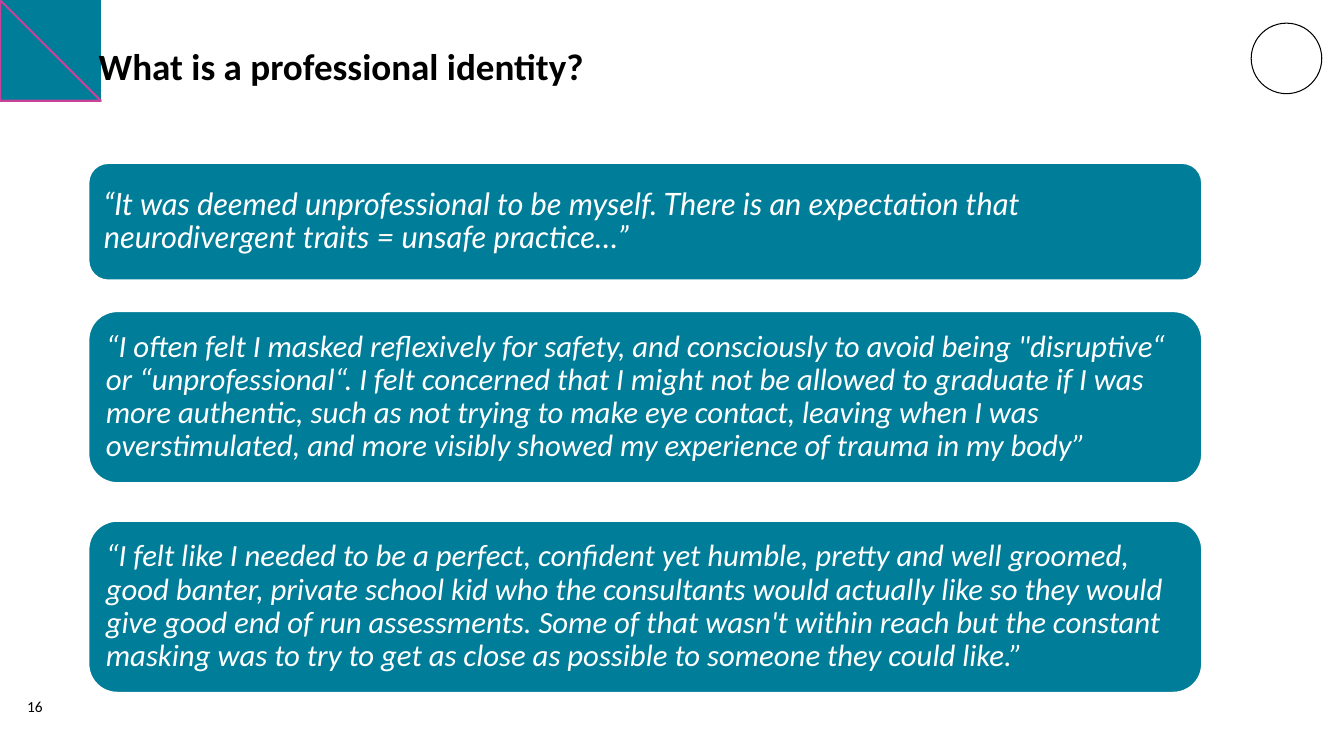
from math import cos, radians, sin

from pptx import Presentation
from pptx.dml.color import RGBColor
from pptx.enum.shapes import MSO_SHAPE
from pptx.enum.text import MSO_ANCHOR, PP_ALIGN
from pptx.util import Inches, Pt

ROUNDED, OVAL = MSO_SHAPE.ROUNDED_RECTANGLE, MSO_SHAPE.OVAL
TOP, MIDDLE, LEFT = MSO_ANCHOR.TOP, MSO_ANCHOR.MIDDLE, PP_ALIGN.LEFT

THEME = {
    "teal": RGBColor(0x00, 0x7D, 0x98),
    "pink": RGBColor(0xC7, 0x42, 0x98),
    "black": RGBColor(0, 0, 0),
    "white": RGBColor(255, 255, 255),
    "font": "Calibri",
    "quote_font": "Lato",
    "title_size": Pt(26.5),
    "quote_size": Pt(22),
    "number_size": Pt(11),
}

# Quote cards share one column: top, height, inset, font, text
CARD_LEFT, CARD_WIDTH = 0.88, 11.04
QUOTES = [
    (1.62, 1.16, 0.15, THEME["quote_font"],
     "“It was deemed unprofessional to be myself. There is an expectation that "
     "neurodivergent traits = unsafe practice…”"),
    (3.09, 1.7, 0.17, THEME["font"],
     "“I often felt I masked reflexively for safety, and consciously to avoid being "
     "\"disruptive“ or “unprofessional“. I felt concerned that I might not be allowed "
     "to graduate if I was more authentic, such as not trying to make eye contact, "
     "leaving when I was overstimulated, and more visibly showed my experience of "
     "trauma in my body”"),
    (5.17, 1.7, 0.17, THEME["font"],
     "“I felt like I needed to be a perfect, confident yet humble, pretty and well "
     "groomed, good banter, private school kid who the consultants would actually like "
     "so they would give good end of run assessments. Some of that wasn't within reach "
     "but the constant masking was to try to get as close as possible to someone they "
     "could like.”"),
]


def paint(shape, fill=None, line=None, width=1):
    shape.shadow.inherit = False
    if fill is None:
        shape.fill.background()
    else:
        shape.fill.solid()
        shape.fill.fore_color.rgb = fill
    if line is None:
        shape.line.fill.background()
    else:
        shape.line.color.rgb = line
        shape.line.width = Pt(width)


def write(shape, text, size, color, insets, anchor, font=THEME["font"],
          bold=False, italic=False, spacing=0.9):
    frame = shape.text_frame
    frame.word_wrap = True
    frame.vertical_anchor = anchor
    (frame.margin_left, frame.margin_top,
     frame.margin_right, frame.margin_bottom) = map(Inches, insets)
    para = frame.paragraphs[0]
    para.text = text
    para.alignment = LEFT
    para.line_spacing = spacing
    para.font.name, para.font.size = font, size
    para.font.bold, para.font.italic = bold, italic
    para.font.color.rgb = color


deck = Presentation()
deck.slide_width, deck.slide_height = Inches(13.33), Inches(7.5)
page = deck.slides.add_slide(deck.slide_layouts[6])
shapes = page.shapes

# Ring at top right
ring = shapes.add_shape(OVAL, Inches(12.41), Inches(0.23), Inches(0.7), Inches(0.7))
paint(ring, line=THEME["black"], width=0.75)

# Corner disc, trimmed at the slide edges, and the triangle over it
disc_x, disc_y, radius = 0.15, 0.17, 0.56
disc = [(max(0, disc_x + radius * cos(radians(angle))),
         max(0, disc_y + radius * sin(radians(angle)))) for angle in range(0, 360, 3)]
triangle = [(0.22, 0.28), (0.85, 0.64), (0.22, 1.0)]
for points, fill, line in ((disc, THEME["teal"], None), (triangle, None, THEME["pink"])):
    builder = shapes.build_freeform(*points[0], scale=Inches(1))
    builder.add_line_segments(points[1:], close=True)
    paint(builder.convert_to_shape(), fill, line, 1.5)

# Title and page number
title = shapes.add_textbox(Inches(0.88), Inches(0.38), Inches(6.02), Inches(1.02))
write(title, "What is a professional identity?", THEME["title_size"], THEME["black"],
      (0.1, 0.05, 0.1, 0.05), TOP, bold=True, spacing=1.0)
number = shapes.add_textbox(Inches(0.27), Inches(6.88), Inches(0.63), Inches(0.27))
write(number, "16", THEME["number_size"], THEME["black"], (0, 0.05, 0.1, 0.05), MIDDLE)

# Quote cards
for top, height, inset, font, quote in QUOTES:
    card = shapes.add_shape(ROUNDED, Inches(CARD_LEFT), Inches(top),
                            Inches(CARD_WIDTH), Inches(height))
    paint(card, THEME["teal"], THEME["white"])
    # The text area of a rounded rectangle already sits inside its corners
    corner_inset = height / 6 * 0.29
    write(card, quote, THEME["quote_size"], THEME["white"],
          [inset - corner_inset] * 2 + [inset - corner_inset] * 2, MIDDLE,
          font=font, italic=True)

deck.save("out.pptx")
